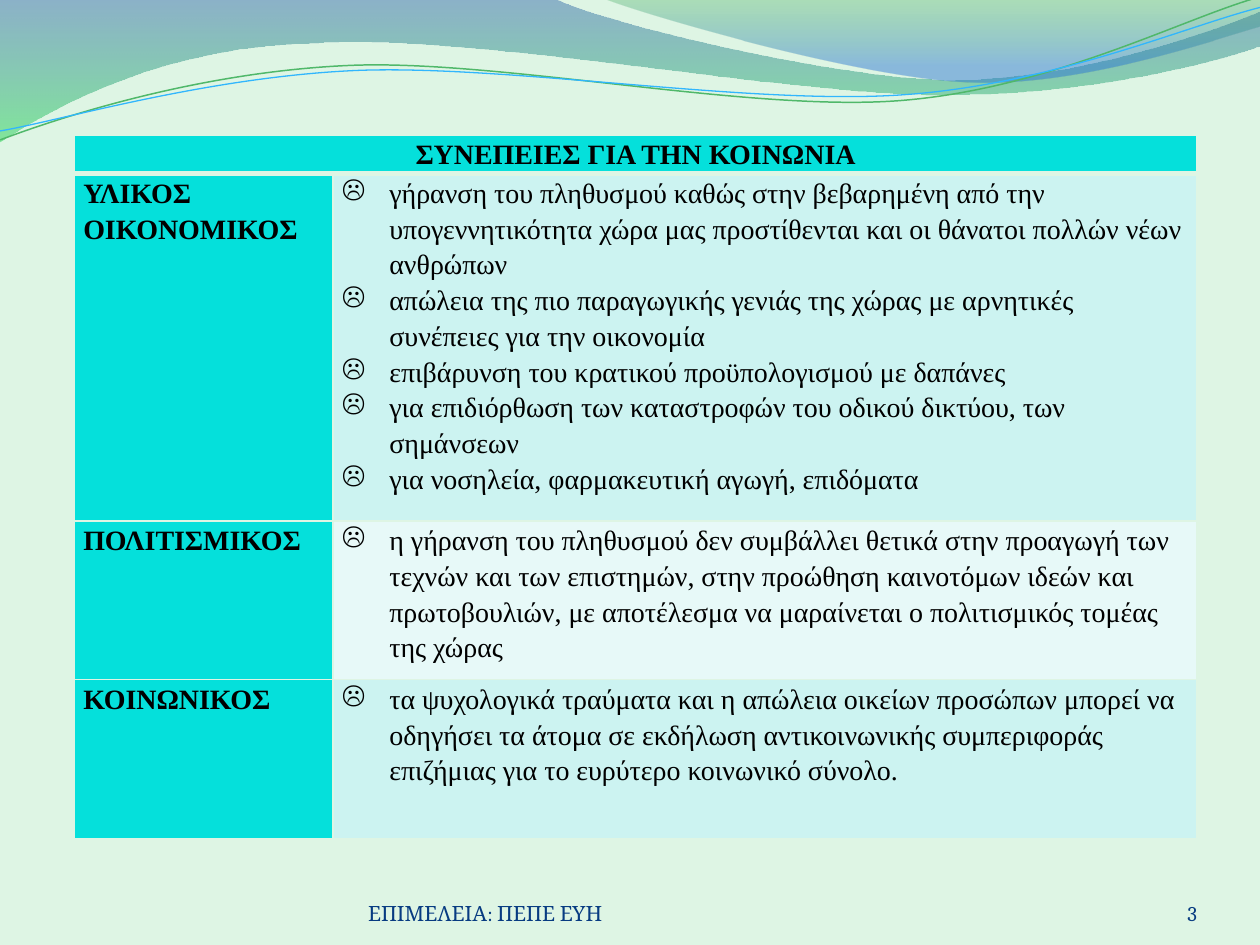
from dataclasses import dataclass
from math import cos, radians, sin

from lxml import etree
from pptx import Presentation
from pptx.dml.color import RGBColor
from pptx.enum.text import MSO_ANCHOR, PP_ALIGN
from pptx.oxml.ns import qn
from pptx.util import Cm, Pt

LEFT, CENTER, RIGHT = PP_ALIGN.LEFT, PP_ALIGN.CENTER, PP_ALIGN.RIGHT
BOTTOM = MSO_ANCHOR.BOTTOM


@dataclass(frozen=True)
class Theme:
    background: str = "DEF5E4"
    heading: str = "05E0DB"
    bands: tuple = ("CCF3F1", "E7F9F8")
    ink: str = "000000"
    footer: str = "073B81"
    table_font: str = "Times New Roman"
    footer_font: str = "Cambria"
    table_size: int = 16
    footer_size: int = 12


THEME = Theme()
TILT = -2.7
STRAND_CENTER = (12.68, 1.48)

WAVES = [
    ([(0, 0), (11.18, -0.03), (12.09, 0.43, 16.87, 1.6, 19.25, 1.6),
      (21.67, 1.6, 24.33, 0.66, 25.4, 0.23), (25.43, 0.91),
      (24.97, 1.12, 22.1, 1.93, 18.95, 1.91), (15.8, 1.91, 9.7, 0.71, 6.53, 0.86),
      (3.28, 0.91, 1.17, 2.11, -0.03, 2.87)],
     [(0, "2960A7", 45), (1, "35DA5E", 55)]),
    ([(12.17, -0.03), (12.93, 0.28, 17.32, 1.57, 19.53, 1.65),
      (21.74, 1.75, 24.41, 0.81, 25.4, 0.53), (25.4, 0)],
     [(0, "36A752", 30), (0.8, "2472D3", 45)]),
]
STRANDS = [
    ([(0, 2.82), (1.22, 2.36, 4.01, 1.45, 7.04, 1.32),
      (10.03, 1.19, 15.06, 2.26, 18.11, 2.03), (21.16, 1.8, 23.83, 0.38, 25.35, -0.05)],
     "50B86A", 0.85),
    ([(0, 2.64), (1.19, 2.44, 4.17, 1.55, 7.19, 1.42),
      (10.24, 1.3, 15.16, 2.13, 18.21, 1.91), (21.23, 1.7, 23.9, 0.53, 25.4, 0.15)],
     "31B6FD", 0.75),
]

TITLE = "ΣΥΝΕΠΕΙΕΣ ΓΙΑ ΤΗΝ ΚΟΙΝΩΝΙΑ"
SECTORS = [
    ("ΥΛΙΚΟΣ ΟΙΚΟΝΟΜΙΚΟΣ", [
        "γήρανση του πληθυσμού καθώς στην βεβαρημένη από την υπογεννητικότητα χώρα μας "
        "προστίθενται και οι θάνατοι πολλών νέων ανθρώπων",
        "απώλεια της πιο παραγωγικής γενιάς της χώρας με αρνητικές συνέπειες για την οικονομία",
        "επιβάρυνση του κρατικού προϋπολογισμού με δαπάνες",
        "για επιδιόρθωση των καταστροφών του οδικού δικτύου, των σημάνσεων",
        "για νοσηλεία, φαρμακευτική αγωγή, επιδόματα",
    ]),
    ("ΠΟΛΙΤΙΣΜΙΚΟΣ", [
        "η γήρανση του πληθυσμού δεν συμβάλλει θετικά στην προαγωγή των τεχνών και των "
        "επιστημών, στην προώθηση καινοτόμων ιδεών και πρωτοβουλιών, με αποτέλεσμα να "
        "μαραίνεται ο πολιτισμικός τομέας της χώρας",
    ]),
    ("ΚΟΙΝΩΝΙΚΟΣ", [
        "τα ψυχολογικά τραύματα και η απώλεια οικείων προσώπων μπορεί να οδηγήσει τα άτομα "
        "σε εκδήλωση αντικοινωνικής συμπεριφοράς επιζήμιας για το ευρύτερο κοινωνικό σύνολο.",
    ]),
]


def rgb(color):
    return RGBColor.from_string(color)


def write(tf, lines, font=THEME.table_font, size=THEME.table_size, color=THEME.ink,
          bold=False, align=LEFT, spacing=None, bullet=None):
    tf.word_wrap = True
    for i, text in enumerate(lines):
        p = tf.paragraphs[0] if i == 0 else tf.add_paragraph()
        p.alignment = align
        if spacing:
            p.line_spacing = spacing
        if bullet:
            pPr = p._p.get_or_add_pPr()
            pPr.set("marL", str(Cm(0.96)))
            pPr.set("indent", str(-Cm(0.96)))
            etree.SubElement(pPr, qn("a:buChar"), char=bullet)
        r = p.add_run()
        r.text = text
        r.font.name, r.font.size, r.font.bold = font, Pt(size), bold
        r.font.color.rgb = rgb(color)


def pairs(part):
    return list(zip(part[::2], part[1::2]))


def turn(x, y, angle):
    cx, cy = STRAND_CENTER
    c, n = cos(radians(angle)), sin(radians(angle))
    dx, dy = x - cx, y - cy
    return cx + dx * c - dy * n, cy + dx * n + dy * c


def add_outline(shapes, outline, left, top, close=False, tilt=0):
    parts = [[(Cm(left + x), Cm(top + y))
              for x, y in (turn(*point, -tilt) for point in pairs(part))]
             for part in outline]
    ends = [part[-1] for part in parts]
    builder = shapes.build_freeform(*ends[0])
    builder.add_line_segments(ends[1:], close=close)
    sp = builder.convert_to_shape()
    x0, y0 = min(x for x, y in ends), min(y for x, y in ends)
    segments = list(sp._element.spPr.iter(qn("a:lnTo")))
    for segment, part in zip(segments, parts[1:]):
        if len(part) == 3:
            curve = etree.Element(qn("a:cubicBezTo"))
            for x, y in part:
                etree.SubElement(curve, qn("a:pt"), x=str(x - x0), y=str(y - y0))
            segment.getparent().replace(segment, curve)
    sp.rotation = tilt
    sp.shadow.inherit = False
    return sp


def add_banner(s, left, top):
    for outline, stops in WAVES:
        sp = add_outline(s.shapes, outline, left, top, close=True)
        sp.line.fill.background()
        sp.fill.gradient()
        sp.fill.gradient_angle = 270
        clrs = []
        for stop, (position, color, alpha) in zip(sp.fill.gradient_stops, stops):
            stop.position = position
            stop.color.rgb = rgb(color)
        clrs = list(sp._element.spPr.iter(qn("a:srgbClr")))
        for clr, (position, color, alpha) in zip(clrs, stops):
            etree.SubElement(clr, qn("a:alpha"), val=str(alpha * 1000))
    group = s.shapes.add_group_shape()
    for outline, color, width in STRANDS:
        sp = add_outline(group.shapes, outline, left, top, tilt=TILT)
        sp.fill.background()
        sp.line.color.rgb = rgb(color)
        sp.line.width = Pt(width)


def style_cell(cell, fill, bottom=1):
    tcPr = cell._tc.get_or_add_tcPr()
    for side, width in (("L", 1), ("R", 1), ("T", 1), ("B", bottom)):
        ln = etree.SubElement(tcPr, qn(f"a:ln{side}"), w=str(Pt(width)))
        solid = etree.SubElement(ln, qn("a:solidFill"))
        etree.SubElement(solid, qn("a:srgbClr"), val=THEME.background)
    cell.fill.solid()
    cell.fill.fore_color.rgb = rgb(fill)
    cell.margin_left = cell.margin_right = Cm(0.18)
    cell.margin_top = cell.margin_bottom = 0


def add_sector_table(s, left, top, widths, heights):
    table = s.shapes.add_table(len(heights), len(widths), Cm(left), Cm(top),
                               Cm(sum(widths)), Cm(sum(heights))).table
    table.first_row = table.horz_banding = False
    for column, width in zip(table.columns, widths):
        column.width = Cm(width)
    for row, height in zip(table.rows, heights):
        row.height = Cm(height)
    title, spanned = table.rows[0].cells
    for cell in (title, spanned):
        style_cell(cell, THEME.heading, bottom=3)
    title.merge(spanned)
    write(title.text_frame, [TITLE], bold=True, align=CENTER, spacing=1.15)
    etree.SubElement(spanned.text_frame.paragraphs[0]._p, qn("a:endParaRPr"),
                     sz=str(THEME.table_size * 100))
    for i, (sector, effects) in enumerate(SECTORS):
        name, body = table.rows[i + 1].cells
        style_cell(name, THEME.heading)
        style_cell(body, THEME.bands[i % 2])
        write(name.text_frame, [sector], bold=True, spacing=1.15)
        write(body.text_frame, effects, spacing=1.15, bullet="☹")


def add_footer(s, left, top, width, height):
    number_width = 2.11
    for text, x, w, align in (
            ("ΕΠΙΜΕΛΕΙΑ: ΠΕΠΕ ΕΥΗ", left, 9.32, LEFT),
            ("3", left + width - number_width, number_width, RIGHT)):
        tf = s.shapes.add_textbox(Cm(x), Cm(top), Cm(w), Cm(height)).text_frame
        tf.margin_left = tf.margin_right = tf.margin_top = tf.margin_bottom = 0
        tf.vertical_anchor = BOTTOM
        write(tf, [text], font=THEME.footer_font, size=THEME.footer_size,
              color=THEME.footer, align=align)


def main():
    prs = Presentation()
    prs.slide_width, prs.slide_height = Cm(25.4), Cm(19.05)
    s = prs.slides.add_slide(prs.slide_layouts[6])
    s.background.fill.solid()
    s.background.fill.fore_color.rgb = rgb(THEME.background)
    add_banner(s, 0, 0)
    add_footer(s, 7.42, 17.65, 16.71, 1.02)
    add_sector_table(s, 1.5, 2.72, (5.21, 17.42), (0.61, 6.88, 3.2, 3.2))
    prs.save("out.pptx")


if __name__ == "__main__":
    main()
